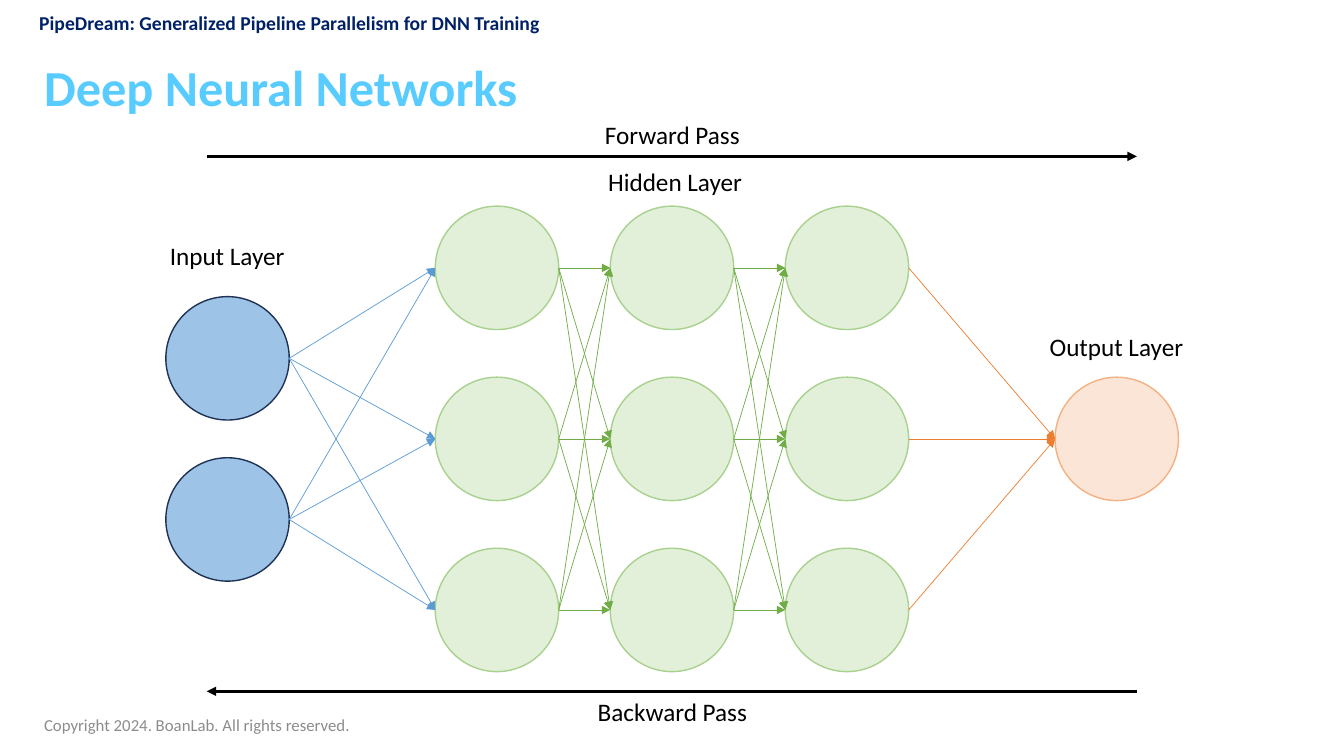
"""Draw a slide of a layered neural network with its forward and backward pass."""
from dataclasses import dataclass
from itertools import pairwise, product

from lxml import etree
from pptx import Presentation
from pptx.dml.color import RGBColor
from pptx.enum.shapes import MSO_CONNECTOR, MSO_SHAPE
from pptx.enum.text import MSO_ANCHOR, PP_ALIGN
from pptx.oxml.ns import qn
from pptx.slide import Slide
from pptx.util import Cm, Pt

OVAL = MSO_SHAPE.OVAL
STRAIGHT = MSO_CONNECTOR.STRAIGHT
TOP, MIDDLE, BOTTOM = MSO_ANCHOR.TOP, MSO_ANCHOR.MIDDLE, MSO_ANCHOR.BOTTOM
LEFT, CENTER = PP_ALIGN.LEFT, PP_ALIGN.CENTER
FONT = "Calibri"
SIZE = 3.11
AXIS = 11.06


@dataclass
class Layer:
    left: float
    count: int
    step: float
    fill: str
    edge: str
    link: str

    def rows(self) -> list[float]:
        first = AXIS - self.step * (self.count - 1) / 2
        return [first + self.step * i for i in range(self.count)]


@dataclass
class Label:
    text: str
    left: float
    top: float
    width: float


LAYERS = [
    Layer(4.18, 2, 4.06, "9DC3E6", "1E3256", "5B9BD5"),
    *[Layer(10.97 + 4.41 * i, 3, 4.31, "E2F0D9", "A9D18E", link)
      for i, link in enumerate(["70AD47", "70AD47", "ED7D31"])],
    Layer(26.59, 1, 0, "FBE5D6", "F4B183", "ED7D31"),
]
LABELS = [
    Label("Forward Pass", 10.9, 2.87, 12.09),
    Label("Backward Pass", 10.9, 17.42, 12.09),
    Label("Hidden Layer", 10.97, 4.06, 12.09),
    Label("Input Layer", 2.36, 5.92, 6.73),
    Label("Output Layer", 24.77, 8.23, 6.73),
]


def color(code: str) -> RGBColor:
    return RGBColor.from_string(code)


def write(slide: Slide, text: str, left: float, top: float, width: float, *,
          height: float = 1.02, size: int = 18, ink: str = "000000",
          bold: bool = False, align: PP_ALIGN = LEFT,
          anchor: MSO_ANCHOR = TOP, space: float = 1.0) -> None:
    box = slide.shapes.add_textbox(Cm(left), Cm(top), Cm(width), Cm(height))
    frame = box.text_frame
    frame.word_wrap = True
    frame.vertical_anchor = anchor
    para = frame.paragraphs[0]
    para.text = text
    para.alignment = align
    para.line_spacing = space
    font = para.font
    font.name, font.size, font.bold = FONT, Pt(size), bold
    font.color.rgb = color(ink)


def arrow(slide: Slide, start: tuple[float, float], end: tuple[float, float],
          ink: str, width: float) -> None:
    line = slide.shapes.add_connector(
        STRAIGHT, *[Cm(v) for v in (*start, *end)])
    line.line.color.rgb = color(ink)
    line.line.width = Pt(width)
    etree.SubElement(line.line._get_or_add_ln(), qn("a:tailEnd"), type="triangle")
    etree.SubElement(line._element.spPr, qn("a:effectLst"))


def nodes(slide: Slide, layer: Layer) -> None:
    for row in layer.rows():
        node = slide.shapes.add_shape(
            OVAL, Cm(layer.left), Cm(row - SIZE / 2), Cm(SIZE), Cm(SIZE))
        node.shadow.inherit = False
        node.fill.solid()
        node.fill.fore_color.rgb = color(layer.fill)
        node.line.color.rgb = color(layer.edge)
        node.line.width = Pt(1)


def links(slide: Slide, here: Layer, there: Layer) -> None:
    for start, end in product(here.rows(), there.rows()):
        arrow(slide, (here.left + SIZE, start), (there.left, end), here.link, 0.5)


def main() -> None:
    deck = Presentation()
    deck.slide_width, deck.slide_height = Cm(33.87), Cm(19.05)
    slide = deck.slides.add_slide(deck.slide_layouts[6])

    write(slide, "Copyright 2024. BoanLab. All rights reserved.", 0.86, 17.75,
          11.43, size=12, ink="8C8C8C", anchor=MIDDLE)
    write(slide, "PipeDream: Generalized Pipeline Parallelism for DNN Training",
          0.74, 0.15, 22.6, size=14, ink="002166", bold=True)
    write(slide, "Deep Neural Networks", 0.86, 1.4, 32.13, height=1.68,
          size=36, ink="59CCFF", bold=True, anchor=BOTTOM, space=0.9)

    arrow(slide, (5.21, 3.94), (28.65, 3.94), "000000", 2.25)
    arrow(slide, (28.65, 17.42), (5.21, 17.42), "000000", 2.25)
    for layer in LAYERS:
        nodes(slide, layer)
    for label in LABELS:
        write(slide, label.text, label.left, label.top, label.width, align=CENTER)
    for here, there in pairwise(LAYERS):
        links(slide, here, there)
    deck.save("out.pptx")


if __name__ == "__main__":
    main()
